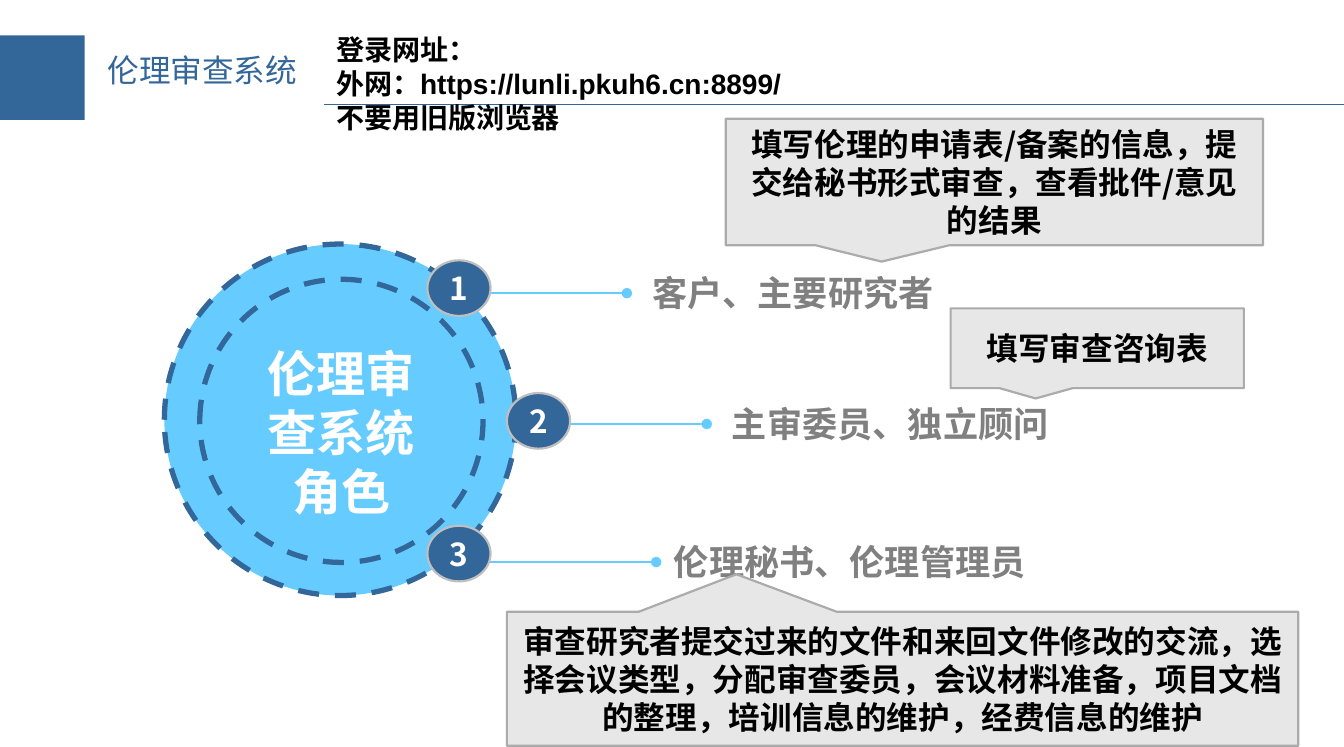
from dataclasses import dataclass

from lxml.etree import SubElement
from pptx import Presentation
from pptx.dml.color import RGBColor
from pptx.enum.dml import MSO_LINE_DASH_STYLE as Dash
from pptx.enum.shapes import MSO_CONNECTOR as Connector, MSO_SHAPE as Shape
from pptx.enum.text import MSO_ANCHOR as Anchor, MSO_AUTO_SIZE as AutoSize, PP_ALIGN as Align
from pptx.oxml.ns import qn
from pptx.util import Pt


@dataclass(frozen=True)
class Theme:
    navy: str = "336699"
    sky: str = "66CCFF"
    grey: str = "808080"
    badge_edge: str = "BFBFBF"
    note_fill: str = "E7E7E7"
    note_edge: str = "ABABAB"
    white: str = "FFFFFF"
    black: str = "000000"
    chinese: str = "Noto Sans CJK SC"
    latin: str = "Arial"
    login_size: int = 16
    text_size: int = 18
    role_size: int = 20
    hub_size: int = 28


THEME = Theme()
SLIDE_SIZE = (765.4, 425.5)

TITLE = "伦理审查系统"
LOGIN = ["登录网址：", "外网：https://lunli.pkuh6.cn:8899/", "不要用旧版浏览器"]
HUB = "伦理审查系统角色"
# name, badge left, ray end, ray height, label left
ROLES = [
    ("客户、主要研究者", 243.4, 357, 167, 371.5),
    ("主审委员、独立顾问", 288.7, 402.5, 241.5, 416.9),
    ("伦理秘书、伦理管理员", 243.4, 373.7, 320.2, 383.8),
]
# text, box, callout tip as shares of the box measured from its centre
NOTES = [
    ("填写伦理的申请表/备案的信息，提交给秘书形式审查，查看批件/意见的结果",
     (413.3, 67.7, 306, 72), (-0.21, 0.63)),
    ("填写审查咨询表", (541.4, 175.7, 167, 45.4), (-0.21, 0.63)),
    ("审查研究者提交过来的文件和来回文件修改的交流，选择会议类型，分配审查委员，"
     "会议材料准备，项目文档的整理，培训信息的维护，经费信息的维护",
     (288.7, 348.5, 450.7, 76.3), (-0.21, -0.78)),
]

HEADER_BLOCK = (0, 20.2, 48.2, 48.2)
TITLE_BOX = (54, 25.2, 136, 28.8)
LOGIN_BOX = (184.3, 15.1, 550.8, 65.5)
RULE_LEFT, RULE_TOP = 184.3, 59.6
DISC = (93.6, 139, 200.2)
RING = (113.8, 159.1, 161.3)
HUB_BOX = (150.5, 195.8, 87.8, 101.5)
BADGE_WIDTH, BADGE_HEIGHT = 36, 31.7
BADGE_TOP, BADGE_STEP = 148.3, 75.6
RAY_LENGTH = 110.2
LABEL_WIDTH, LABEL_HEIGHT = 283.7, 24.5


def color(code):
    return RGBColor.from_string(code)


def points(*lengths):
    return [Pt(length) for length in lengths]


def write(box, lines, size, ink, font=THEME.chinese, bold=True,
          align=Align.LEFT, anchor=Anchor.TOP, inset=None):
    frame = box.text_frame
    frame.word_wrap = True
    frame.auto_size = AutoSize.NONE
    frame.vertical_anchor = anchor
    if inset is not None:
        frame.margin_left = frame.margin_right = Pt(inset)
        frame.margin_top = frame.margin_bottom = Pt(inset)
    for index, line in enumerate(lines):
        para = frame.add_paragraph() if index else frame.paragraphs[0]
        para.alignment = align
        span = para.add_run()
        span.text = line
        span.font.name = font
        span.font.size = Pt(size)
        span.font.bold = bold
        span.font.color.rgb = color(ink)
        east_asian = SubElement(span.font._element, qn("a:ea"))
        east_asian.set("typeface", THEME.chinese)


def add_text(page, place, lines, size, ink, **options):
    box = page.shapes.add_textbox(*points(*place))
    write(box, lines, size, ink, **options)


def add_block(page, kind, place, fill=None, edge=None, width=1.25, dash=None):
    block = page.shapes.add_shape(kind, *points(*place))
    block.shadow.inherit = False
    if fill:
        block.fill.solid()
        block.fill.fore_color.rgb = color(fill)
    else:
        block.fill.background()
    if edge:
        block.line.color.rgb = color(edge)
        block.line.width = Pt(width)
        if dash:
            block.line.dash_style = dash
    else:
        block.line.fill.background()
    return block


def add_line(page, start, end, ink, width, dot=False):
    """Draw a straight line, with a round dot at its start if asked."""
    line = page.shapes.add_connector(Connector.STRAIGHT, *points(*start, *end))
    line.line.color.rgb = color(ink)
    line.line.width = Pt(width)
    if dot:
        SubElement(line.line._get_or_add_ln(), qn("a:headEnd")).set("type", "oval")
    SubElement(line._element.spPr, qn("a:effectLst"))


def add_circle(page, circle, fill=None):
    left, top, size = circle
    add_block(page, Shape.OVAL, (left, top, size, size), fill, THEME.navy, 3, Dash.DASH)


def add_header(page):
    add_block(page, Shape.RECTANGLE, HEADER_BLOCK, THEME.navy)
    title = page.shapes.title
    title.left, title.top, title.width, title.height = points(*TITLE_BOX)
    write(title, [TITLE], THEME.text_size, THEME.navy, bold=False)
    add_line(page, (RULE_LEFT, RULE_TOP), (SLIDE_SIZE[0], RULE_TOP), THEME.navy, 0.75)


def add_roles(page):
    for name, badge_left, ray_end, ray_top, label_left in ROLES:
        add_line(page, (ray_end, ray_top), (ray_end - RAY_LENGTH, ray_top),
                 THEME.sky, 1.5, dot=True)
    add_circle(page, DISC, THEME.sky)
    add_text(page, HUB_BOX, [HUB], THEME.hub_size, THEME.white,
             align=Align.CENTER, inset=0)
    for index, (name, badge_left, ray_end, ray_top, label_left) in enumerate(ROLES):
        place = (badge_left, BADGE_TOP + index * BADGE_STEP, BADGE_WIDTH, BADGE_HEIGHT)
        badge = add_block(page, Shape.OVAL, place, THEME.navy, THEME.badge_edge)
        write(badge, [str(index + 1)], THEME.text_size, THEME.white,
              align=Align.CENTER, anchor=Anchor.MIDDLE)
        label = (label_left, ray_top - LABEL_HEIGHT / 2, LABEL_WIDTH, LABEL_HEIGHT)
        add_text(page, label, [name], THEME.role_size, THEME.grey,
                 font=THEME.latin, inset=0)
    add_circle(page, RING)


def add_notes(page):
    for text, place, tip in NOTES:
        note = add_block(page, Shape.RECTANGULAR_CALLOUT, place,
                         THEME.note_fill, THEME.note_edge)
        note.adjustments[0], note.adjustments[1] = tip
        write(note, [text], THEME.text_size, THEME.black,
              align=Align.CENTER, anchor=Anchor.MIDDLE)


def main():
    deck = Presentation()
    deck.slide_width, deck.slide_height = points(*SLIDE_SIZE)
    page = deck.slides.add_slide(deck.slide_layouts.get_by_name("Title Only"))
    add_header(page)
    add_roles(page)
    add_notes(page)
    add_text(page, LOGIN_BOX, LOGIN, THEME.login_size, THEME.black, font=THEME.latin)
    deck.save("out.pptx")


if __name__ == "__main__":
    main()
